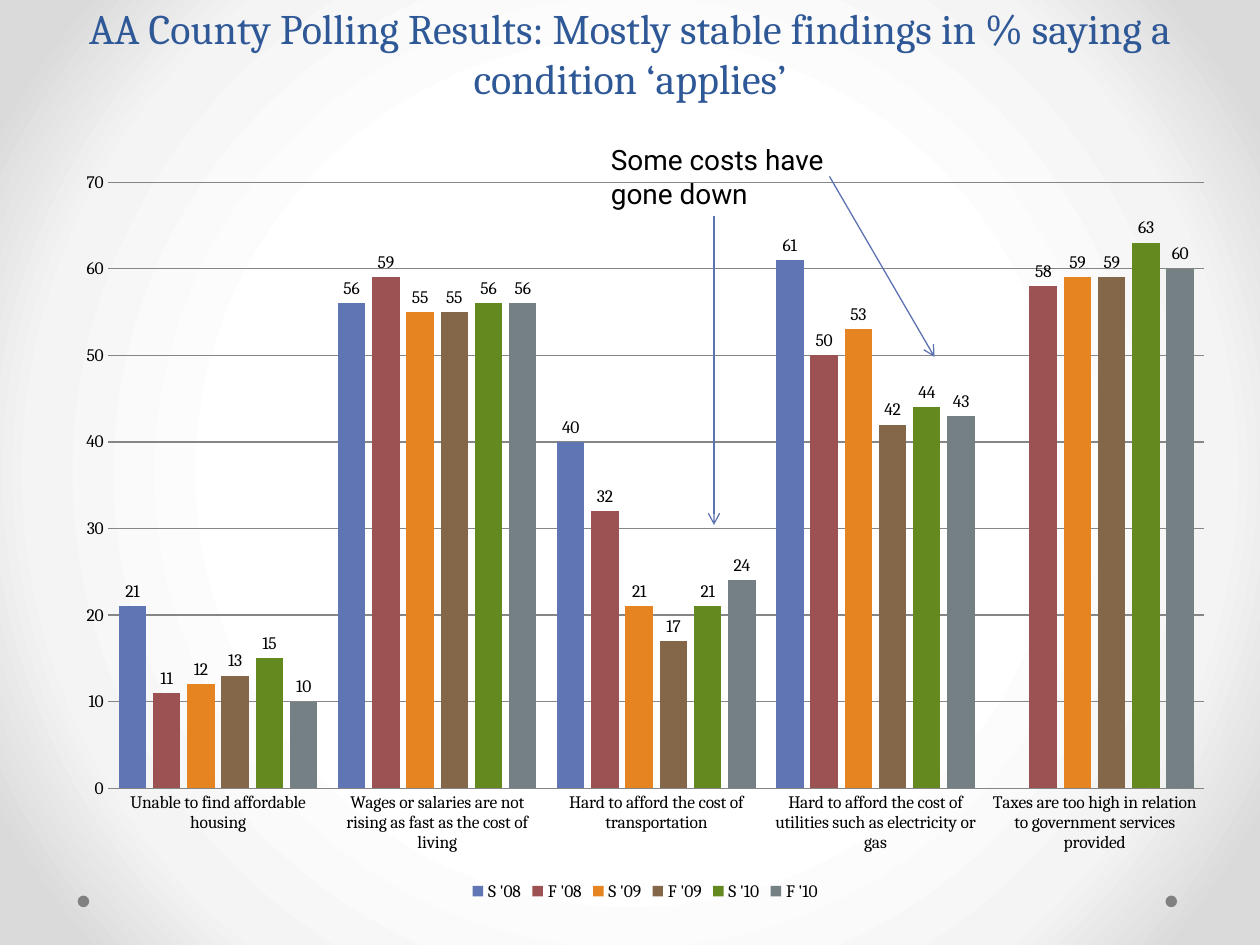
"""Build the county polling slide with its clustered column chart."""
import pptx
import pptx.chart.data
import pptx.dml.color
import pptx.enum.chart
import pptx.enum.shapes
import pptx.enum.text
import pptx.oxml
import pptx.oxml.ns
import pptx.util
from lxml import etree

CELL = pptx.util.Inches(1) / 12
COLUMNS, ROWS = 120, 90
SERIF, SANS = "Cambria", "Roboto"
BLACK, GRID_GREY, DOT_GREY = "000000", "868686", "808080"
TITLE_BLUE, ARROW_BLUE = "2F5897", "5C72B2"
BACKGROUND_STOPS = [(50, "FFFFFF"), (76, "F4F4F4"), (92, "DADADA")]

CONDITIONS = [
    "Unable to find affordable housing",
    "Wages or salaries are not rising as fast as the cost of living",
    "Hard to afford the cost of transportation",
    "Hard to afford the cost of utilities such as electricity or gas",
    "Taxes are too high in relation to government services provided",
]
POLLS = [
    ("S '08", "6076B4", (21, 56, 40, 61, None)),
    ("F '08", "9C5252", (11, 59, 32, 50, 58)),
    ("S '09", "E68422", (12, 55, 21, 53, 59)),
    ("F '09", "846648", (13, 55, 17, 42, 59)),
    ("S '10", "63891F", (15, 56, 21, 44, 63)),
    ("F '10", "758085", (10, 56, 24, 43, 60)),
]


def cells(*counts):
    """Convert grid cells to slide lengths."""
    return [pptx.util.Emu(round(count * CELL)) for count in counts]


def rgb(code):
    """Return the colour for a hex string."""
    return pptx.dml.color.RGBColor.from_string(code)


def style_font(font, size, face, colour):
    """Set the size, typeface and colour of a font."""
    font.size = pptx.util.Pt(size)
    font.name = face
    font.color.rgb = rgb(colour)


def style_line(line, colour):
    """Give a line its colour and a thin width."""
    line.color.rgb = rgb(colour)
    line.width = pptx.util.Pt(0.75)


def paint_background(slide):
    """Fill the slide with a circular gradient."""
    fill = slide.background.fill
    fill.gradient()
    stops = "".join(
        f'<a:gs pos="{share * 1000}"><a:srgbClr val="{colour}"/></a:gs>'
        for share, colour in BACKGROUND_STOPS
    )
    radial = pptx.oxml.parse_xml(
        f'<a:gradFill {pptx.oxml.ns.nsdecls("a")} rotWithShape="1">'
        f"<a:gsLst>{stops}</a:gsLst>"
        '<a:path path="circle"><a:fillToRect l="50000" t="50000" r="50000" b="50000"/></a:path>'
        "</a:gradFill>"
    )
    properties = slide.background._cSld.bg.bgPr
    linear = properties.find(pptx.oxml.ns.qn("a:gradFill"))
    properties.replace(linear, radial)


def add_dot(slide, box):
    """Draw one decorative footer dot."""
    dot = slide.shapes.add_shape(pptx.enum.shapes.MSO_SHAPE.OVAL, *cells(*box))
    dot.shadow.inherit = False
    dot.fill.solid()
    dot.fill.fore_color.rgb = rgb(DOT_GREY)
    dot.line.fill.background()


def place_title(slide, box, wording):
    """Place the headline so that it grows upward from its box."""
    title = slide.shapes.title
    title.left, title.top, title.width, title.height = cells(*box)
    frame = title.text_frame
    frame.text = wording
    frame.word_wrap = True
    frame.auto_size = pptx.enum.text.MSO_AUTO_SIZE.NONE
    frame.vertical_anchor = pptx.enum.text.MSO_ANCHOR.BOTTOM
    headline = frame.paragraphs[0]
    headline.alignment = pptx.enum.text.PP_ALIGN.CENTER
    style_font(headline.runs[0].font, 24, SERIF, TITLE_BLUE)


def style_axes(chart):
    """Format both axes and the gridlines."""
    no_tick = pptx.enum.chart.XL_TICK_MARK.NONE
    for axis in (chart.category_axis, chart.value_axis):
        axis.major_tick_mark = axis.minor_tick_mark = no_tick
    style_line(chart.category_axis.format.line, GRID_GREY)
    scale = chart.value_axis
    scale.minimum_scale, scale.maximum_scale, scale.major_unit = 0, 70, 10
    scale.format.line.fill.background()
    scale.has_major_gridlines = True
    style_line(scale.major_gridlines.format.line, GRID_GREY)


def add_poll_chart(slide, box):
    """Chart the share saying each condition applies, by poll."""
    results = pptx.chart.data.CategoryChartData()
    results.categories = CONDITIONS
    for poll, _, shares in POLLS:
        results.add_series(poll, shares)
    kind = pptx.enum.chart.XL_CHART_TYPE.COLUMN_CLUSTERED
    chart = slide.shapes.add_chart(kind, *cells(*box), results).chart
    chart.has_title = False
    style_font(chart.font, 10, SERIF, BLACK)
    chart.has_legend = True
    chart.legend.position = pptx.enum.chart.XL_LEGEND_POSITION.BOTTOM
    chart.legend.include_in_layout = False
    style_axes(chart)
    columns = chart.plots[0]
    columns.gap_width, columns.overlap, columns.vary_by_categories = 75, -25, False
    for series, (_, colour, _) in zip(columns.series, POLLS):
        series.format.fill.solid()
        series.format.fill.fore_color.rgb = rgb(colour)
        series.invert_if_negative = False
        series.data_labels.show_value = True
        series.data_labels.position = pptx.enum.chart.XL_LABEL_POSITION.OUTSIDE_END


def add_note(slide, box, wording):
    """Write the remark above the columns."""
    frame = slide.shapes.add_textbox(*cells(*box)).text_frame
    frame.word_wrap = True
    frame.auto_size = pptx.enum.text.MSO_AUTO_SIZE.SHAPE_TO_FIT_TEXT
    frame.text = wording
    style_font(frame.paragraphs[0].runs[0].font, 16, SANS, BLACK)


def add_arrow(slide, ends):
    """Point from the remark to a group of columns."""
    straight = pptx.enum.shapes.MSO_CONNECTOR.STRAIGHT
    arrow = slide.shapes.add_connector(straight, *cells(*ends))
    style_line(arrow.line, ARROW_BLUE)
    outline = arrow.line._get_or_add_ln()
    etree.SubElement(outline, pptx.oxml.ns.qn("a:tailEnd"), type="arrow")
    etree.SubElement(arrow._element.spPr, pptx.oxml.ns.qn("a:effectLst"))


def main():
    """Assemble and save the slide."""
    deck = pptx.Presentation()
    deck.slide_width, deck.slide_height = cells(COLUMNS, ROWS)
    slide = deck.slides.add_slide(deck.slide_layouts.get_by_name("Title Only"))
    paint_background(slide)
    for left in (111, 7.4):
        add_dot(slide, (left, 85.3, 1.1, 1.1))
    place_title(
        slide,
        (6, 5, 108, 5.4),
        "AA County Polling Results: Mostly stable findings in % saying a condition ‘applies’",
    )
    add_poll_chart(slide, (6, 15, 110.9, 71.3))
    add_note(slide, (57, 13, 27, 7.7), "Some costs have gone down")
    for ends in ((68, 20.6, 68, 50), (79, 16.8, 89, 34)):
        add_arrow(slide, ends)
    deck.save("out.pptx")


if __name__ == "__main__":
    main()
